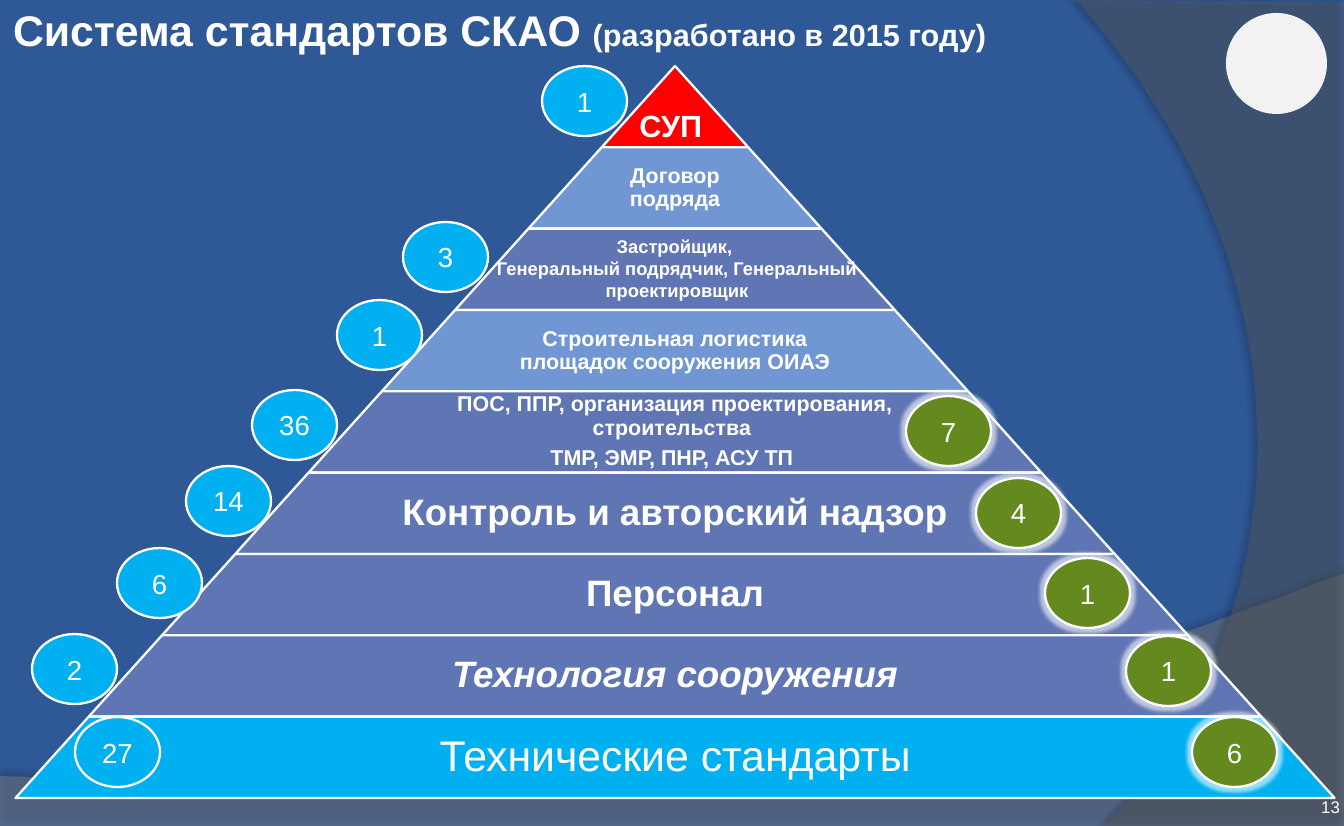
from lxml.etree import SubElement
from pptx import Presentation
from pptx.dml.color import RGBColor
from pptx.enum.shapes import MSO_SHAPE as Preset
from pptx.enum.text import MSO_ANCHOR as Anchor, PP_ALIGN as Align
from pptx.oxml.ns import qn
from pptx.util import Pt

PX = 8305  # EMU
SLIDE_W, SLIDE_H = 1344, 826
WHITE, RED, SKY, GREEN = "FFFFFF", "FF0000", "00B0F0", "63891F"
BLUE, VIOLET = "7097D3", "6076B4"

TITLE = [("Система стандартов СКАО ", 28), ("(разработано в 2015 году)", 20)]
PAGE_NUMBER = "13"

# fill, size, bold, italic, lines
TIERS = [
    (RED, 20, True, False, ["СУП "]),
    (BLUE, 14, True, False, ["Договор подряда"]),
    (VIOLET, 12, True, False, ["Застройщик, ", "Генеральный подрядчик, Генеральный проектировщик"]),
    (BLUE, 14, True, False, ["Строительная логистика площадок сооружения ОИАЭ"]),
    (VIOLET, 14, True, False, ["ПОС, ППР, организация проектирования, строительства ",
                               "ТМР, ЭМР, ПНР, АСУ ТП "]),
    (VIOLET, 24, True, False, ["Контроль и авторский надзор"]),
    (VIOLET, 24, True, False, ["Персонал"]),
    (VIOLET, 24, True, True, ["Технология сооружения"]),
    (SKY, 28, False, False, ["Технические стандарты"]),
]
APEX_X, APEX_Y, PYRAMID_W, PYRAMID_H = 675, 66, 1319, 732
DEVELOPER_TIER = 2
DEVELOPER_BOX = (426, 214, 502, 108)

# count, left, top
GREEN_COUNTS = [("1", 1126, 636), ("1", 1045, 558), ("4", 976, 478),
                ("7", 906, 396), ("6", 1192, 717)]
BLUE_COUNTS = [("1", 542, 66), ("3", 403, 222), ("1", 337, 300), ("36", 252, 390),
               ("14", 186, 466), ("6", 117, 548), ("2", 32, 634), ("27", 75, 717)]
COUNT_W, COUNT_H = 85, 70

# straight corners, curve (start, two controls, end), fill, opacity, shadow
WAVES = [
    ([(0, 776), (0, 827), (1344, 827)],
     [(1344, 573), (751, 803), (525, 792), (0, 776)], "7F7F7F", 45, (35, 4, 3.5, 270)),
    ([(1344, 2), (1344, 826)],
     [(1104, 826), (1256, 682), (1367, 330), (1076, 0)], "5E5E5E", 40, (45, 4, 4, 180)),
]


def rgb(color):
    return RGBColor.from_string(color)


def emu(*lengths):
    return [round(length * PX) for length in lengths]


def add_effect(shape, kind, color, opacity, **settings):
    effects = shape.element.spPr.find(qn("a:effectLst"))
    effect = SubElement(effects, qn(f"a:{kind}"), {k: str(v) for k, v in settings.items()})
    tint = SubElement(effect, qn("a:srgbClr"), val=color)
    SubElement(tint, qn("a:alpha"), val=str(opacity * 1000))


def paint(shape, fill, outlined=True):
    shape.shadow.inherit = False
    shape.fill.solid()
    shape.fill.fore_color.rgb = rgb(fill)
    if outlined:
        shape.line.color.rgb = rgb(WHITE)
        shape.line.width = Pt(1.5)
    else:
        shape.line.fill.background()


def add_run(paragraph, text, size, bold=False, italic=False):
    run = paragraph.add_run()
    run.text = text
    run.font.name, run.font.size = "Arial", Pt(size)
    run.font.bold, run.font.italic = bold, italic
    run.font.color.rgb = rgb(WHITE)


def prepare_frame(shape, anchor, inset=0):
    frame = shape.text_frame
    frame.word_wrap = True
    frame.vertical_anchor = anchor
    frame.margin_left = frame.margin_right = inset * PX
    frame.margin_top = frame.margin_bottom = inset * PX
    return frame


def cubic(start, control1, control2, end, steps=48):
    """Sample a Bezier curve, both ends included."""
    for step in range(steps + 1):
        t = step / steps
        weights = ((1 - t) ** 3, 3 * t * (1 - t) ** 2, 3 * t * t * (1 - t), t ** 3)
        yield tuple(sum(w * point[axis] for w, point in
                        zip(weights, (start, control1, control2, end))) for axis in (0, 1))


def add_wave(shapes, corners, curve, fill, opacity, shadow):
    first, *others = corners
    outline = shapes.build_freeform(*first, scale=PX)
    outline.add_line_segments(others + list(cubic(*curve)), close=True)
    wave = outline.convert_to_shape()
    paint(wave, fill, outlined=False)
    tint = wave.element.spPr.find(qn("a:solidFill")).find(qn("a:srgbClr"))
    SubElement(tint, qn("a:alpha"), val=str(opacity * 1000))
    shade, blur, distance, angle = shadow
    add_effect(wave, "outerShdw", "000000", shade, blurRad=Pt(blur), dist=Pt(distance),
               dir=angle * 60000, algn="ctr", rotWithShape=0)


def add_tier(shapes, index, fill, size, bold, italic, lines):
    height = PYRAMID_H / len(TIERS)
    half_step = PYRAMID_W / len(TIERS) / 2
    width, top = 2 * half_step * (index + 1), APEX_Y + height * index
    tier = shapes.add_shape(Preset.TRAPEZOID, *emu(APEX_X - width / 2, top, width, height))
    tier.adjustments[0] = half_step / height
    paint(tier, fill)

    is_developer = index == DEVELOPER_TIER
    label_w = width if index == 0 else width * 0.65
    box = DEVELOPER_BOX if is_developer else (APEX_X - label_w / 2, top, label_w, height)
    frame = prepare_frame(shapes.add_textbox(*emu(*box)),
                          Anchor.BOTTOM if index == 0 else Anchor.MIDDLE, 3)
    for number, line in enumerate(lines):
        paragraph = frame.add_paragraph() if number else frame.paragraphs[0]
        paragraph.alignment = Align.CENTER
        if not is_developer:
            paragraph.line_spacing = 0.9
            paragraph.space_after = Pt(5)
        add_run(paragraph, line, size, bold, italic)


def add_count(shapes, count, left, top, fill):
    oval = shapes.add_shape(Preset.OVAL, *emu(left, top, COUNT_W, COUNT_H))
    paint(oval, fill)
    if fill == GREEN:
        add_effect(oval, "glow", WHITE, 60, rad=Pt(5))
    paragraph = prepare_frame(oval, Anchor.MIDDLE).paragraphs[0]
    paragraph.alignment = Align.CENTER
    add_run(paragraph, count, 18)


def main():
    deck = Presentation()
    deck.slide_width, deck.slide_height = emu(SLIDE_W, SLIDE_H)
    slide = deck.slides.add_slide(deck.slide_layouts[6])
    slide.background.fill.solid()
    slide.background.fill.fore_color.rgb = rgb("2F5897")
    shapes = slide.shapes

    for wave in WAVES:
        add_wave(shapes, *wave)
    emblem = shapes.add_shape(Preset.OVAL, *emu(1226, 13, 101, 101))
    paint(emblem, "F2F2F2", outlined=False)

    title = prepare_frame(shapes.add_textbox(*emu(13, 14, 1188, 69)), Anchor.TOP).paragraphs[0]
    title.line_spacing = 0.8
    for text, size in TITLE:
        add_run(title, text, size, bold=True)
    page = prepare_frame(shapes.add_textbox(*emu(1228, 773, 112, 44)), Anchor.BOTTOM).paragraphs[0]
    page.alignment = Align.RIGHT
    add_run(page, PAGE_NUMBER, 11)

    for index, tier in enumerate(TIERS):
        add_tier(shapes, index, *tier)
    for fill, counts in ((GREEN, GREEN_COUNTS), (SKY, BLUE_COUNTS)):
        for count in counts:
            add_count(shapes, *count, fill)

    deck.save("out.pptx")


if __name__ == "__main__":
    main()
